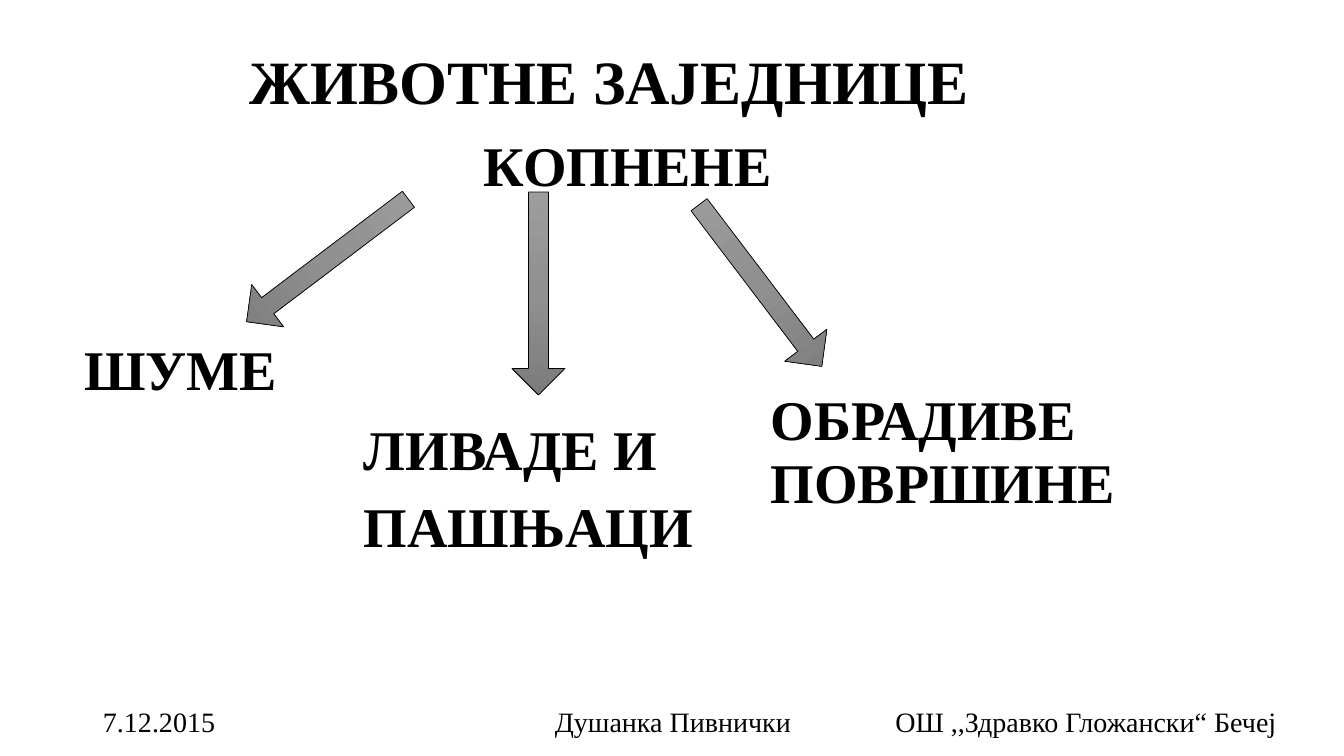
from copy import deepcopy

from pptx import Presentation
from pptx import util as u
from pptx.dml.color import RGBColor
from pptx.enum import shapes, text

HUES = {"ink": "000000", "light": "9D9D9D", "mid": "909090", "dark": "7C7C7C"}
HEAD = {"size": u.Pt(44), "bold": True}
TOPIC = {"size": u.Pt(40), "bold": True}
FOOT = {"size": u.Pt(20), "bold": False}


class Board:
    face = "Times New Roman"
    scale = 914400 / 100.8

    def __init__(self, deck):
        deck.slide_width, deck.slide_height = self.emu(1344, 756)
        self.slide = deck.slides.add_slide(deck.slide_layouts[6])

    def emu(self, *sizes):
        return [u.Emu(round(size * self.scale)) for size in sizes]

    def hue(self, name):
        return RGBColor.from_string(HUES[name])

    def label(self, box, lines, style, middle=False, center=False, lead=1.0):
        frame = self.slide.shapes.add_textbox(*self.emu(*box)).text_frame
        frame.word_wrap = True
        anchor = text.MSO_ANCHOR
        frame.vertical_anchor = anchor.MIDDLE if middle else anchor.TOP
        inset_x, inset_y = self.emu(10, 5)
        frame.margin_left = frame.margin_right = inset_x
        frame.margin_top = frame.margin_bottom = inset_y
        for i, line in enumerate(lines):
            para = frame.add_paragraph() if i else frame.paragraphs[0]
            para.line_spacing = lead
            para.space_before = u.Pt(10 if i else 0)
            para.alignment = text.PP_ALIGN.CENTER if center else text.PP_ALIGN.LEFT
            run = para.add_run()
            run.text = line
            for key, value in {"name": self.face, **style}.items():
                setattr(run.font, key, value)
            run.font.color.rgb = self.hue("ink")

    def arrow(self, left, top, turn):
        shape = self.slide.shapes.add_shape(
            shapes.MSO_SHAPE.DOWN_ARROW, *self.emu(left, top, 53, 203))
        shape.shadow.inherit = False
        shape.rotation = turn
        shape.adjustments[0] = 0.5
        shape.adjustments[1] = 0.38
        shape.adjustments[0], shape.adjustments[1] = 0.38, 0.5
        shape.line.color.rgb = self.hue("ink")
        shape.line.width = u.Pt(0.5)
        fill = shape.fill
        fill.gradient()
        fill.gradient_angle = 270
        stops = shape._element.spPr.gradFill.gsLst
        stops.append(deepcopy(stops[0]))
        for i, name in enumerate(("light", "mid", "dark")):
            stop = fill.gradient_stops[i]
            stop.position = i / 2
            stop.color.rgb = self.hue(name)


def main():
    deck = Presentation()
    board = Board(deck)
    board.label((240, 30, 748, 109), ["ЖИВОТНЕ ЗАЈЕДНИЦЕ"], HEAD, middle=True, lead=0.9)
    for box, lines in (
        ((474, 130, 327, 57), ["КОПНЕНЕ"]),
        ((74, 334, 243, 57), ["ШУМЕ"]),
        ((354, 414, 371, 125), ["ЛИВАДЕ И", "ПАШЊАЦИ"]),
        ((761, 384, 507, 127), ["ОБРАДИВЕ ПОВРШИНЕ"]),
    ):
        board.label(box, lines, TOPIC, lead=0.95)
    for left, top, turn in ((301, 159, 52.9), (512, 192, 0), (734, 184, 322.8)):
        board.arrow(left, top, turn)
    for left, width, line, center in (
        (93, 302, "7.12.2015", False),
        (446, 454, "Душанка Пивнички", True),
        (859, 454, "ОШ ,,Здравко Гложански“ Бечеј", True),
    ):
        board.label((left, 701, width, 40), [line], FOOT, middle=True, center=center)
    deck.save("out.pptx")


if __name__ == "__main__":
    main()
